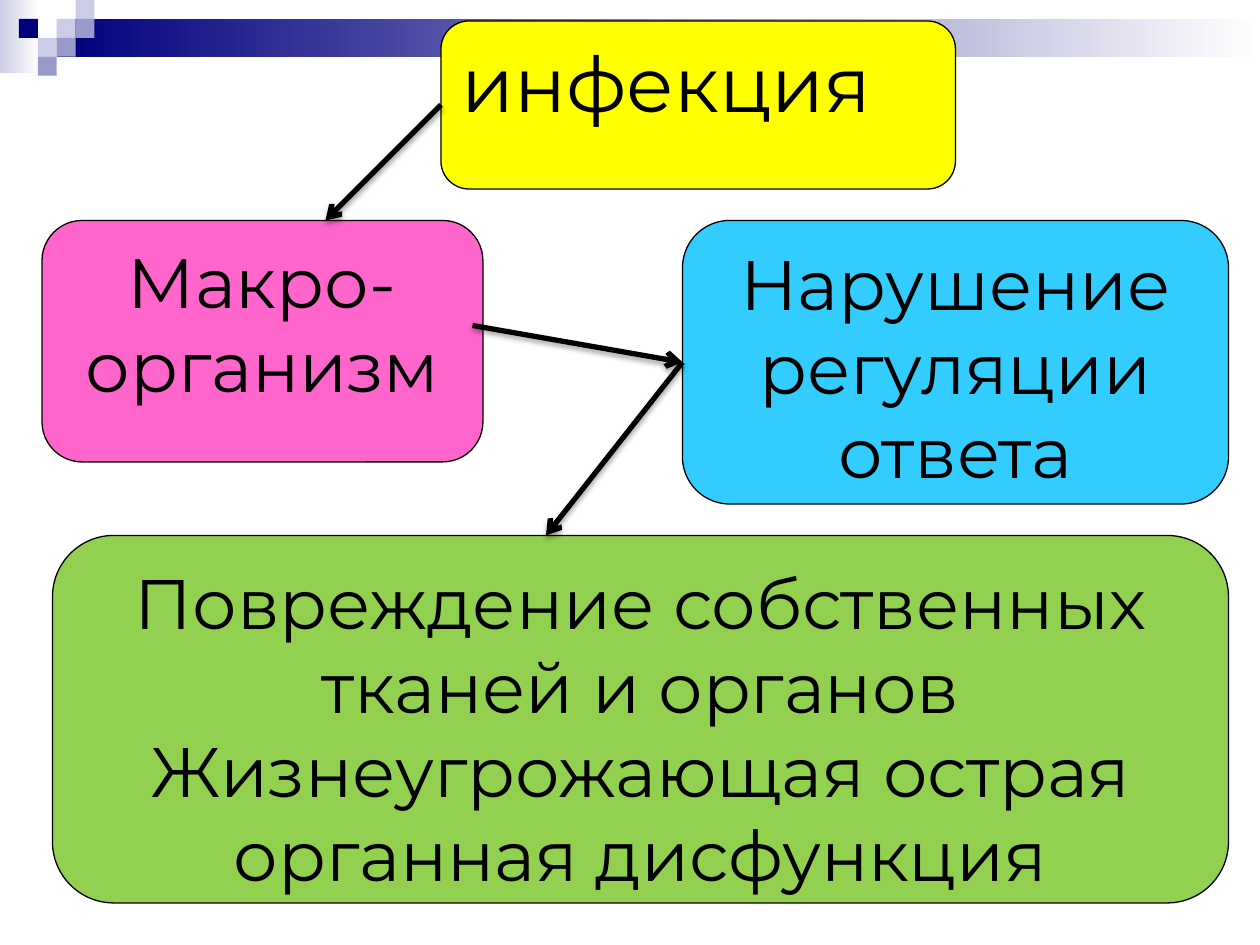
from lxml import etree
from pptx import Presentation
from pptx.dml.color import RGBColor
from pptx.enum.shapes import MSO_CONNECTOR, MSO_SHAPE
from pptx.enum.text import MSO_ANCHOR, PP_ALIGN
from pptx.oxml import parse_xml
from pptx.oxml.ns import nsdecls, qn
from pptx.util import Pt

FONT = "Montserrat"
BLACK, WHITE = "000000", "FFFFFF"
NAVY, LILAC, PALE = "00007D", "9999CC", "CCCCE6"
SHADOW = (
    f'<a:effectLst {nsdecls("a")}><a:outerShdw blurRad="{Pt(3.1)}" dist="{Pt(1.8)}" '
    'dir="5400000" rotWithShape="0"><a:srgbClr val="000000"><a:alpha val="35000"/>'
    '</a:srgbClr></a:outerShdw></a:effectLst>'
)


def rgb(value):
    return RGBColor.from_string(value)


def add_box(s, kind, box):
    sp = s.shapes.add_shape(kind, *map(Pt, box))
    sp.shadow.inherit = False
    return sp


def add_plain(s, box, color, end=None):
    """Borderless rectangle, solid or fading to the end colour."""
    sp = add_box(s, MSO_SHAPE.RECTANGLE, box)
    sp.line.fill.background()
    if end is None:
        sp.fill.solid()
        sp.fill.fore_color.rgb = rgb(color)
        return
    sp.fill.gradient()
    sp.fill.gradient_angle = 0
    for stop, value in zip(sp.fill.gradient_stops, (color, end)):
        stop.color.rgb = rgb(value)


def add_header(s, box):
    """Fading bars with a mosaic of squares on a regular grid."""
    left, top, width, height = box
    cell = height / 4
    add_plain(s, (left, top, 22.3, 41.8), PALE, WHITE)
    add_plain(s, (left + 3 * cell, top + cell, width - 3 * cell, 2 * cell), NAVY, WHITE)
    squares = [(3, 1, PALE), (4, 0, PALE), (4, 1, LILAC), (2, 2, PALE),
               (1, 1, NAVY), (3, 2, LILAC), (2, 3, LILAC)]
    for col, row, color in squares:
        add_plain(s, (left + col * cell, top + row * cell, cell, cell), color)


def add_card(s, box, color, lines, size=40, align=PP_ALIGN.CENTER):
    sp = add_box(s, MSO_SHAPE.ROUNDED_RECTANGLE, box)
    sp.fill.solid()
    sp.fill.fore_color.rgb = rgb(color)
    sp.line.color.rgb = rgb(BLACK)
    sp.line.width = Pt(0.75)
    tf = sp.text_frame
    tf.word_wrap = True
    tf.vertical_anchor = MSO_ANCHOR.TOP
    tf.text = "\n".join(lines)
    for p in tf.paragraphs:
        p.alignment = align
        p.font.name = FONT
        p.font.size = Pt(size)
        p.font.color.rgb = rgb(BLACK)


def add_arrow(s, start, end):
    line = s.shapes.add_connector(MSO_CONNECTOR.STRAIGHT, *map(Pt, start + end))
    line.line.color.rgb = rgb(BLACK)
    line.line.width = Pt(3)
    etree.SubElement(line.line._get_or_add_ln(), qn("a:tailEnd"), type="arrow")
    line._element.spPr.append(parse_xml(SHADOW))


def main():
    prs = Presentation()
    prs.slide_width, prs.slide_height = Pt(720), Pt(540)
    s = prs.slides.add_slide(prs.slide_layouts[6])

    add_header(s, (0, 0, 720, 43.2))

    # Stages of the process
    add_card(s, (252, 12, 294, 96), "FFFF00", ["инфекция"], 44, PP_ALIGN.LEFT)
    add_card(s, (24, 126, 252, 138), "FF66CC", ["Макро-организм"])
    add_card(s, (390, 126, 312, 162), "33CCFF", ["Нарушение регуляции ответа"])
    add_card(s, (30, 306, 672, 210), "92D050",
             ["Повреждение собственных тканей и органов",
              "Жизнеугрожающая острая органная дисфункция"])

    # Arrows between the stages
    add_arrow(s, (252, 60), (186, 126))
    add_arrow(s, (270, 186), (390, 207))
    add_arrow(s, (390, 207), (312, 306))

    prs.save("out.pptx")


if __name__ == "__main__":
    main()
